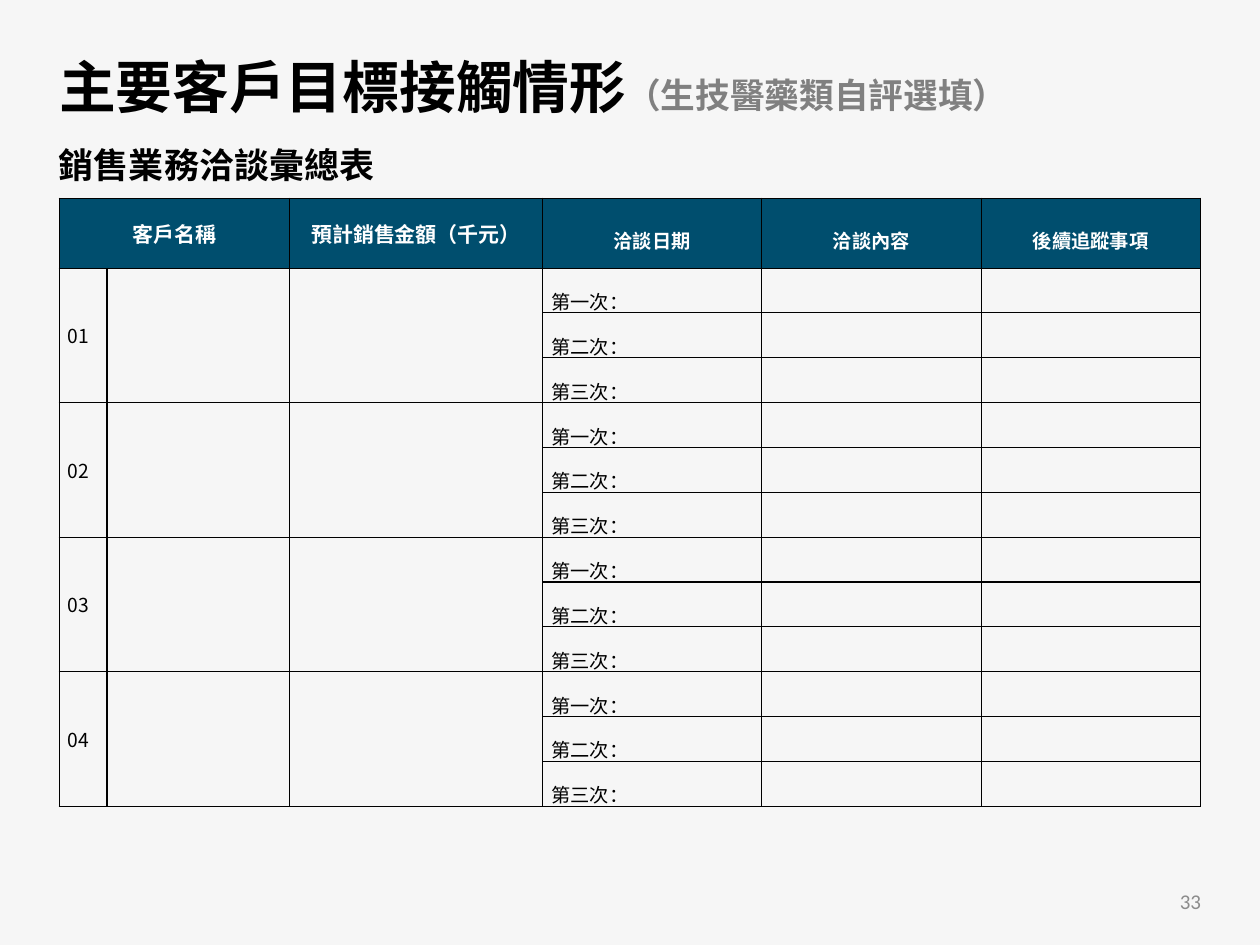
from lxml.etree import SubElement
from pptx import Presentation
from pptx.dml.color import RGBColor
from pptx.enum.text import MSO_ANCHOR as Anchor, MSO_AUTO_SIZE as AutoSize, PP_ALIGN as Align
from pptx.oxml import parse_xml
from pptx.oxml.ns import nsdecls, qn
from pptx.util import Pt

BACKGROUND = RGBColor(0xF6, 0xF6, 0xF6)
BLACK = RGBColor(0x00, 0x00, 0x00)
WHITE = RGBColor(0xFF, 0xFF, 0xFF)
HEADER = RGBColor(0x00, 0x4E, 0x6E)
SUBTITLE_GREY = RGBColor(0x80, 0x80, 0x80)
NUMBER_GREY = RGBColor(0x8C, 0x8C, 0x8C)

COLUMN_WIDTHS = (27.4, 104.3, 144.6, 125.3, 125.3, 125.3)
HEADER_HEIGHT, ROW_HEIGHT = 40, 25.2
HEADINGS = {
    0: ("客戶名稱", 12, None),
    2: ("預計銷售金額（千元）", 12, None),
    3: ("洽談日期", 11, 1.5),
    4: ("洽談內容", 11, 1.5),
    5: ("後續追蹤事項", 11, 1.5),
}
CUSTOMERS = ("01", "02", "03", "04")
MEETINGS = ("第一次：", "第二次：", "第三次：")


class SlideBuilder:
    """Holds the text style and the current slide, and adds elements to it."""

    def __init__(self, presentation, font="Noto Sans CJK SC"):
        self.font = font
        self.slide = presentation.slides.add_slide(presentation.slide_layouts[5])
        self.slide.background.fill.solid()
        self.slide.background.fill.fore_color.rgb = BACKGROUND

    def run(self, paragraph, text, size, color=BLACK, bold=False, font=None):
        run = paragraph.add_run()
        run.text = text
        run.font.size = Pt(size)
        run.font.bold = bold
        run.font.color.rgb = color
        run.font.name = font or self.font
        SubElement(run.font._element, qn("a:ea"), typeface=font or self.font)

    def place(self, shape, left, top, width, height):
        shape.left, shape.top = Pt(left), Pt(top)
        shape.width, shape.height = Pt(width), Pt(height)

    def title(self, box, *runs):
        shape = self.slide.shapes.title
        self.place(shape, *box)
        frame = shape.text_frame
        frame.auto_size = AutoSize.NONE
        frame.vertical_anchor = Anchor.MIDDLE
        paragraph = frame.paragraphs[0]
        paragraph.alignment = Align.LEFT
        paragraph.line_spacing = 1.2
        for text, size, color in runs:
            self.run(paragraph, text, size, color, bold=True)

    def text(self, box, text, size, align=Align.LEFT, anchor=Anchor.TOP, **style):
        frame = self.slide.shapes.add_textbox(*map(Pt, box)).text_frame
        frame.word_wrap = True
        frame.vertical_anchor = anchor
        paragraph = frame.paragraphs[0]
        paragraph.alignment = align
        self.run(paragraph, text, size, **style)

    def table(self, left, top, widths, heights):
        box = map(Pt, (left, top, sum(widths), sum(heights)))
        table = self.slide.shapes.add_table(len(heights), len(widths), *box).table
        table.first_row = table.horz_banding = False
        for column, width in zip(table.columns, widths):
            column.width = Pt(width)
        for row, height in zip(table.rows, heights):
            row.height = Pt(height)
        for cell in table.iter_cells():
            self.format_cell(cell)
        return table

    def format_cell(self, cell):
        cell.vertical_anchor = Anchor.MIDDLE
        cell.margin_left = cell.margin_right = Pt(5)
        cell.margin_top = cell.margin_bottom = Pt(2.9)
        cell.fill.background()
        properties = cell._tc.get_or_add_tcPr()
        for position, side in enumerate(("lnL", "lnR", "lnT", "lnB")):
            border = parse_xml(
                f'<a:{side} {nsdecls("a")} w="{Pt(0.75)}"><a:solidFill>'
                f'<a:srgbClr val="{BLACK}"/></a:solidFill></a:{side}>'
            )
            properties.insert(position, border)
        paragraph = cell.text_frame.paragraphs[0]
        SubElement(paragraph._p, qn("a:endParaRPr"), sz="1100")

    def cell_text(self, cell, text, size=11, align=Align.LEFT, spacing=None, **style):
        paragraph = cell.text_frame.paragraphs[0]
        paragraph.alignment = align
        paragraph.line_spacing = spacing
        self.run(paragraph, text, size, **style)


def fill_table(builder, table):
    for column in range(len(COLUMN_WIDTHS)):
        cell = table.cell(0, column)
        cell.fill.solid()
        cell.fill.fore_color.rgb = HEADER
    table.cell(0, 0).merge(table.cell(0, 1))
    for column, (text, size, spacing) in HEADINGS.items():
        builder.cell_text(table.cell(0, column), text, size, Align.CENTER, spacing,
                          color=WHITE, bold=True)
    for index, customer in enumerate(CUSTOMERS):
        first = 1 + index * len(MEETINGS)
        for column in range(3):
            table.cell(first, column).merge(table.cell(first + len(MEETINGS) - 1, column))
        builder.cell_text(table.cell(first, 0), customer)
        for row, meeting in enumerate(MEETINGS, first):
            builder.cell_text(table.cell(row, 3), meeting, spacing=1.5)


def main():
    presentation = Presentation()
    presentation.slide_width, presentation.slide_height = Pt(720), Pt(540)
    builder = SlideBuilder(presentation)
    builder.title((26.6, 15.8, 666, 58.3),
                  ("主要客戶目標接觸情形", 32.4, BLACK),
                  ("（生技醫藥類自評選填）", 19.8, SUBTITLE_GREY))
    builder.text((531.4, 500.4, 162, 28.8), "33", 12, Align.RIGHT, Anchor.MIDDLE,
                 color=NUMBER_GREY, font="Calibri")
    builder.text((26.6, 78.5, 393.8, 31.7), "銷售業務洽談彙總表", 20, bold=True)
    heights = [HEADER_HEIGHT] + [ROW_HEIGHT] * (len(CUSTOMERS) * len(MEETINGS))
    fill_table(builder, builder.table(33.8, 113.2, COLUMN_WIDTHS, heights))
    presentation.save("out.pptx")


if __name__ == "__main__":
    main()
